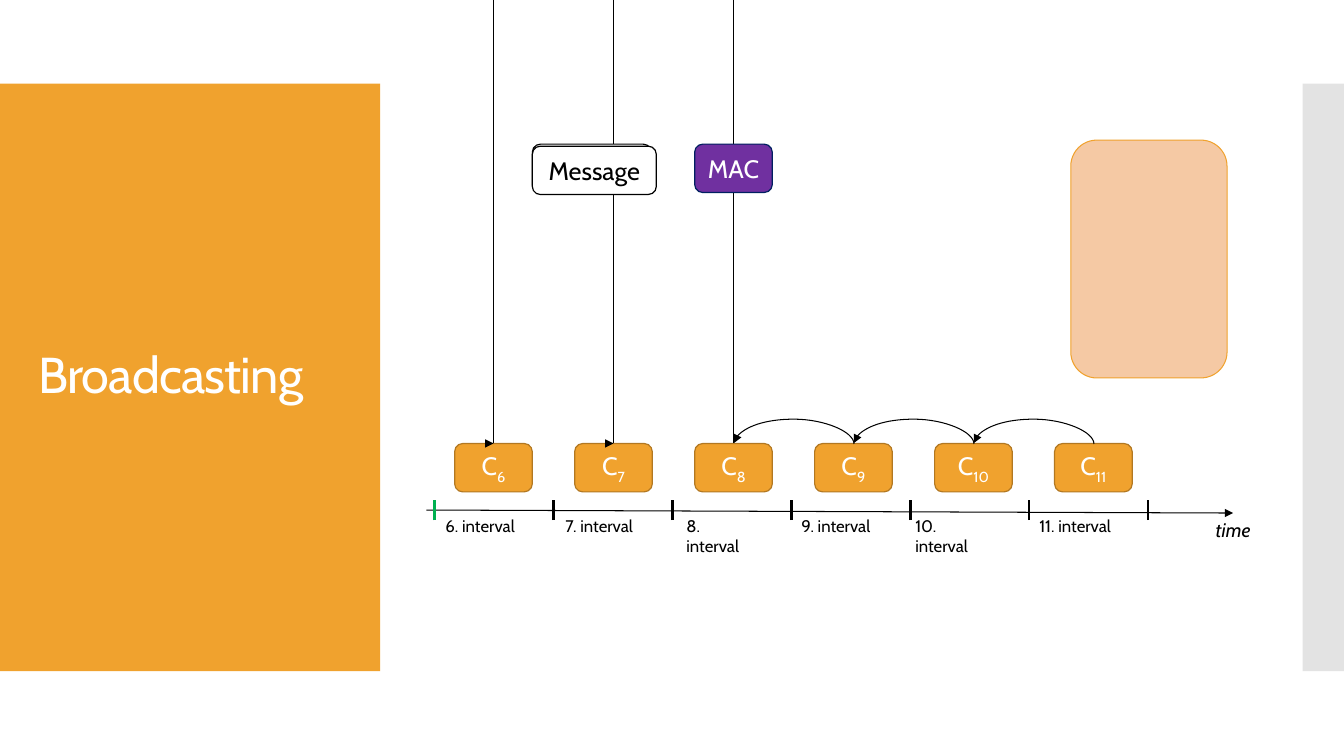
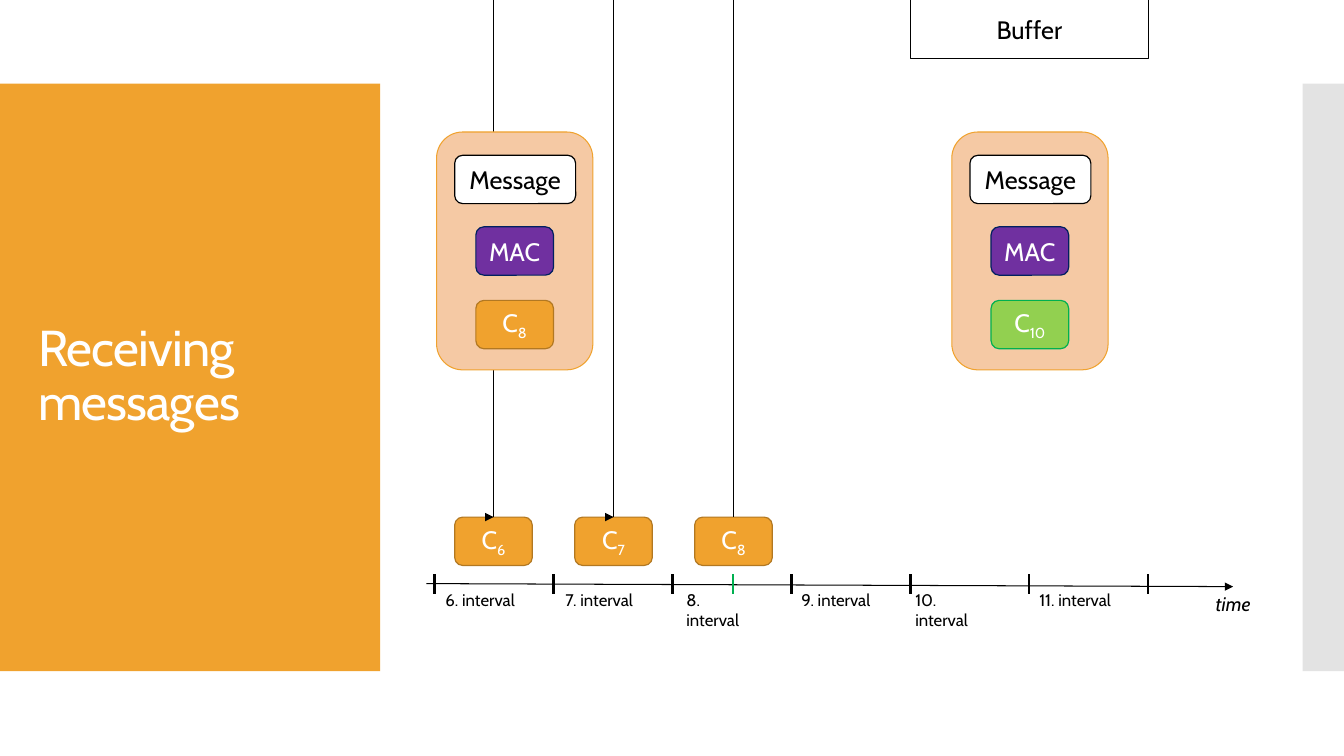
from lxml import etree
from pptx import Presentation
from pptx import util as u
from pptx.dml.color import RGBColor
from pptx.enum import shapes as es, text as et
from pptx.oxml.ns import qn

FONT = "Cabin"
BLACK, WHITE = "000000", "FFFFFF"
ORANGE, BROWN, PEACH, GREY = "F0A22E", "B27822", "F5C9A4", "E3E3E3"
PURPLE, NAVY, LIME, GREEN = "7030A0", "002060", "92D050", "00B050"
RECT, ROUND = es.MSO_SHAPE.RECTANGLE, es.MSO_SHAPE.ROUNDED_RECTANGLE
STRAIGHT, CURVE = es.MSO_CONNECTOR.STRAIGHT, es.MSO_CONNECTOR.CURVE
CELL_W, CELL_H, CELL_STEP = 0.77, 0.48, 1.19
FIRST_TICK, TICK_STEP = 4.31, 1.18
LABELS = {6: (4.32, 1.1), 7: (5.51, 1.1), 8: (6.71, 0.8),
          9: (7.85, 1.1), 10: (8.98, 0.8), 11: (10.21, 1.1)}


def inches(*values):
    return [u.Inches(v) for v in values]


def rgb(color):
    return RGBColor.from_string(color)


def style(r, size, color, italic=False):
    r.font.name = FONT
    r.font.size = u.Pt(size)
    r.font.color.rgb = rgb(color)
    r.font.italic = italic


def box(shapes, kind, at, fill, line=None, width=0.85):
    sp = shapes.add_shape(kind, *inches(*at))
    sp.shadow.inherit = False
    sp.fill.solid()
    sp.fill.fore_color.rgb = rgb(fill)
    if line:
        sp.line.color.rgb = rgb(line)
        sp.line.width = u.Pt(width)
    else:
        sp.line.fill.background()
    return sp


def caption(sp, text, color, sub=None):
    tf = sp.text_frame
    tf.vertical_anchor = et.MSO_ANCHOR.MIDDLE
    p = tf.paragraphs[0]
    p.alignment = et.PP_ALIGN.CENTER
    p.text = text
    if sub:
        r = p.add_run()
        r.text = str(sub)
        r.font._element.set("baseline", "-25000")
    for r in p.runs:
        style(r, 18, color)


def message(shapes, left, top, width):
    sp = box(shapes, ROUND, (left, top, width, CELL_H), WHITE, BLACK)
    caption(sp, "Message", BLACK)


def mac(shapes, left, top):
    sp = box(shapes, ROUND, (left, top, CELL_W, CELL_H), PURPLE, NAVY)
    caption(sp, "MAC", WHITE)


def key(shapes, left, top, n, fill=ORANGE, line=BROWN):
    sp = box(shapes, ROUND, (left, top, CELL_W, CELL_H), fill, line)
    caption(sp, "C", WHITE, n)
    return sp


def card(shapes, left, top):
    box(shapes, ROUND, (left, top, 1.55, 2.36), PEACH, ORANGE, 0.75)


def packet(s, left, top, n, fill=ORANGE, line=BROWN):
    shapes = s.shapes.add_group_shape().shapes
    card(shapes, left, top)
    message(shapes, left + 0.18, top + 0.23, 1.2)
    mac(shapes, left + 0.39, top + 0.94)
    key(shapes, left + 0.39, top + 1.67, n, fill, line)


def connector(s, ends, color=BLACK, width=0.75, arrow=False, kind=STRAIGHT):
    c = s.shapes.add_connector(kind, *inches(*ends))
    c.line.color.rgb = rgb(color)
    c.line.width = u.Pt(width)
    if arrow:
        ln = c.line._get_or_add_ln()
        etree.SubElement(ln, qn("a:tailEnd")).set("type", "triangle")
    etree.SubElement(c._element.spPr, qn("a:effectLst"))
    return c


def arc(s, right, y):
    x, half = right - CELL_STEP / 2, CELL_STEP / 2
    c = connector(s, (x, y + half, x + 0.01, y - half), arrow=True, kind=CURVE)
    spPr = c._element.spPr
    spPr.find(qn("a:xfrm")).set("rot", "16200000")
    av = spPr.find(qn("a:prstGeom")).find(qn("a:avLst"))
    gd = etree.SubElement(av, qn("a:gd"))
    gd.set("name", "adj1")
    gd.set("fmla", "val 2500000")


def label(s, at, text, size, italic=False, color=BLACK):
    tf = s.shapes.add_textbox(*inches(*at)).text_frame
    tf.word_wrap = True
    tf.text = text
    style(tf.paragraphs[0].runs[0], size, color, italic)
    return tf


def frame(prs, title):
    s = prs.slides.add_slide(prs.slide_layouts[6])
    box(s.shapes, RECT, (0, 0.83, 3.77, 5.83), ORANGE)
    box(s.shapes, RECT, (12.92, 0.83, 0.42, 5.83), GREY)
    tf = label(s, (0.28, 1.23, 3.22, 5.03), title, 36, color=WHITE)
    tf.vertical_anchor = et.MSO_ANCHOR.MIDDLE
    p = tf.paragraphs[0]
    p.line_spacing = 0.9
    p.runs[0].font._element.set("spc", "-60")
    return s


def tick(s, x, y, color=BLACK):
    connector(s, (x, y + 0.1, x, y - 0.1), color, 1.5)


def timeline(s, y, last_key, now):
    connector(s, (4.23, y, 12.23, y + 0.03), arrow=True)
    for i in range(len(LABELS) + 1):
        tick(s, FIRST_TICK + i * TICK_STEP, y)
    tick(s, now, y, GREEN)
    for n, (left, width) in LABELS.items():
        label(s, (left, y + 0.01, width, 0.3), f"{n}. interval", 12)
    label(s, (11.96, y + 0.03, 0.7, 0.34), "time", 14, italic=True)

    top = y - 0.66
    for n in range(6, last_key + 1):
        left = 4.51 + (n - 6) * CELL_STEP
        x = left + CELL_W / 2
        sp = key(s.shapes, left, top, n)
        if n > 8:
            arc(s, x, top)
            continue
        connector(s, (x, 0, x, top)).end_connect(sp, 0)
        if n < 8:
            connector(s, (x - 0.08, top, x, top), arrow=True)


def broadcasting(prs):
    s = frame(prs, "Broadcasting")
    card(s.shapes, 10.62, 1.39)
    timeline(s, 5.06, 11, FIRST_TICK)
    box(s.shapes, ROUND, (5.28, 1.43, 1.18, CELL_H), WHITE, BLACK)
    message(s.shapes, 5.28, 1.45, 1.23)
    mac(s.shapes, 6.89, 1.43)


def receiving(prs):
    s = frame(prs, "Receiving messages")
    packet(s, 9.44, 1.31, 10, LIME, GREEN)
    timeline(s, 5.79, 8, 7.27)
    sp = box(s.shapes, RECT, (9.03, -0.31, 2.36, 0.89), WHITE, BLACK)
    caption(sp, "Buffer", BLACK)
    sp.text_frame.margin_top = u.Inches(0.36)
    packet(s, 4.33, 1.31, 8)


def main():
    prs = Presentation()
    prs.slide_width, prs.slide_height = inches(13.33, 7.5)
    broadcasting(prs)
    receiving(prs)
    prs.save("out.pptx")


if __name__ == "__main__":
    main()
